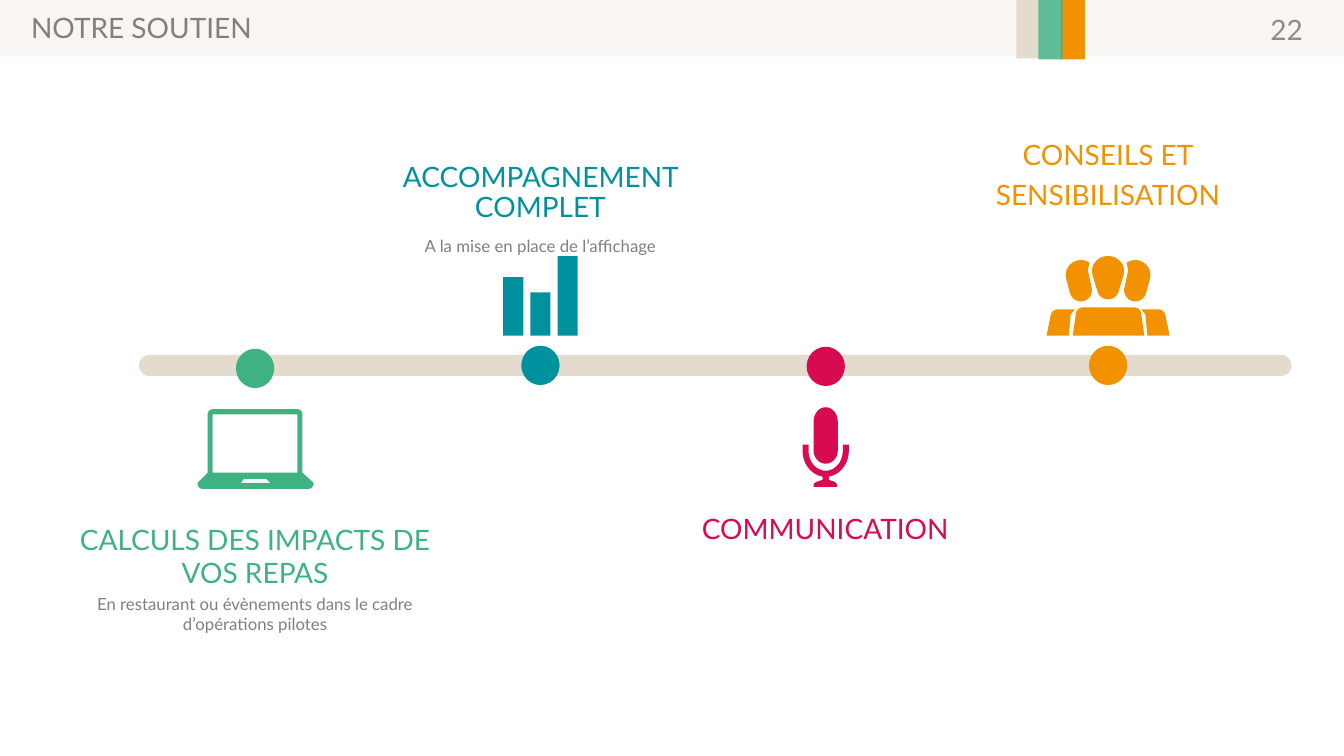
"""Build the « Notre soutien » timeline slide."""
import math

from lxml import etree
from pptx import Presentation
from pptx.dml.color import RGBColor
from pptx.enum.shapes import MSO_SHAPE
from pptx.enum.text import MSO_ANCHOR, PP_ALIGN
from pptx.oxml.ns import qn
from pptx.util import Inches, Pt

RECTANGLE, OVAL, ROUNDED = MSO_SHAPE.RECTANGLE, MSO_SHAPE.OVAL, MSO_SHAPE.ROUNDED_RECTANGLE
LEFT, CENTER, RIGHT = PP_ALIGN.LEFT, PP_ALIGN.CENTER, PP_ALIGN.RIGHT
TOP, MIDDLE = MSO_ANCHOR.TOP, MSO_ANCHOR.MIDDLE
FONT = "Lato"
COLORS = {
    "sand": "E4DBCF", "green": "3FB284", "teal": "00919F", "pink": "D60B52",
    "orange": "F39200", "grey": "808080", "number": "8C8C8C",
}

BANDS = [
    ((0, -0.02, 13.33, 0.58), "sand", 26),
    ((10.08, 0, 0.23, 0.58), "sand", 100),
    ((10.52, -0.01, 0.24, 0.6), "orange", 100),
    ((10.3, -0.01, 0.24, 0.6), "green", 83),
]
TRACK = (1.38, 3.52, 11.43, 0.21)
DOT_SIZE = (0.38, 0.39)
DOTS = [(2.34, 3.46, "green"), (5.17, 3.43, "teal"), (8, 3.44, "pink"), (10.8, 3.43, "orange")]

# Each paragraph is (text, size, colour, space before).
TEXTS = [
    ((0.21, 0.09, 4.94, 0.4), LEFT, TOP, 0.9, [("NOTRE SOUTIEN", 20, "grey", 0)]),
    ((12.2, 0.09, 0.82, 0.4), RIGHT, MIDDLE, 1.0, [("22", 20, "number", 0)]),
    ((0.62, 5.13, 3.82, 1.6), CENTER, TOP, 1.0, [
        ("CALCULS DES IMPACTS DE VOS REPAS", 20, "green", 0),
        ("En restaurant ou évènements dans le cadre d’opérations pilotes", 12, "grey", 3)]),
    ((3.45, 1.57, 3.82, 0.8), CENTER, TOP, 0.9, [
        ("ACCOMPAGNEMENT COMPLET", 20, "teal", 0),
        ("A la mise en place de l’affichage", 12, "grey", 10)]),
    ((6.29, 5.02, 3.79, 0.72), CENTER, TOP, 1.0, [("COMMUNICATION", 20, "pink", 0)]),
    ((9.57, 1.31, 2.84, 0.95), CENTER, TOP, 1.0, [
        ("CONSEILS ET", 20, "orange", 0), ("SENSIBILISATION", 20, "orange", 4.8)]),
]


def arc(center_x, center_y, radius_x, radius_y, start, end):
    steps = max(4, round(abs(end - start) / 9))
    angles = [math.radians(start + (end - start) * i / steps) for i in range(steps + 1)]
    return [(center_x + radius_x * math.cos(a), center_y + radius_y * math.sin(a)) for a in angles]


def rectangle(left, top, right, bottom):
    return [(left, top), (right, top), (right, bottom), (left, bottom)]


def mirror(outline, axis):
    return [(2 * axis - x, y) for x, y in outline]


LAPTOP = [
    arc(2.11, 4.11, 0.05, 0.05, 180, 270) + arc(2.95, 4.11, 0.05, 0.05, 270, 360)
    + [(3, 4.69), (3.11, 4.79)] + arc(3.06, 4.8, 0.05, 0.05, 0, 90)
    + arc(2.01, 4.8, 0.05, 0.05, 90, 180) + [(1.96, 4.79), (2.06, 4.69)],
    rectangle(2.11, 4.11, 2.95, 4.69)[::-1],
    [(2.39, 4.79), (2.68, 4.79), (2.64, 4.75), (2.42, 4.75)],
]
BARS = [rectangle(4.99 + 0.27 * i, top, 5.19 + 0.27 * i, 3.33)
        for i, top in enumerate([2.75, 2.9, 2.54])]
MICROPHONE = [
    [(7.96, 4.41), (8.02, 4.41)] + arc(8.19, 4.47, 0.17, 0.2, 180, 0)
    + [(8.36, 4.41), (8.42, 4.41)] + arc(8.19, 4.47, 0.23, 0.26, 0, 82)
    + [(8.22, 4.76), (8.28, 4.78), (8.3, 4.8), (8.3, 4.83),
       (8.07, 4.83), (8.07, 4.8), (8.1, 4.78), (8.16, 4.76)]
    + arc(8.19, 4.47, 0.23, 0.26, 98, 180),
    arc(8.19, 4.18, 0.12, 0.14, 180, 360) + arc(8.19, 4.47, 0.12, 0.13, 0, 180),
]
SIDE_PERSON = [
    arc(10.72, 2.73, 0.15, 0.15, 165, 305) + [(10.79, 2.68), (10.83, 2.87)]
    + arc(10.72, 2.88, 0.11, 0.11, 0, 165),
    arc(10.49, 3.14, 0.07, 0.07, 190, 270)
    + [(10.66, 3.07), (10.62, 3.12), (10.6, 3.33), (10.38, 3.33)],
]
MIDDLE_PERSON = [
    arc(10.99, 2.69, 0.16, 0.15, 165, 375) + arc(10.99, 2.86, 0.11, 0.11, 10, 170),
    arc(10.74, 3.12, 0.07, 0.07, 180, 270) + arc(11.25, 3.12, 0.07, 0.07, 270, 360)
    + [(11.35, 3.33), (10.64, 3.33)],
]
PEOPLE = SIDE_PERSON + MIDDLE_PERSON + [mirror(part, 10.99) for part in SIDE_PERSON]
ICONS = [(LAPTOP, "green"), (BARS, "teal"), (MICROPHONE, "pink"), (PEOPLE, "orange")]


def paint(shape, color, opacity=100):
    shape.shadow.inherit = False
    shape.fill.solid()
    shape.fill.fore_color.rgb = RGBColor.from_string(COLORS[color])
    shape.line.fill.background()
    if opacity < 100:
        color_node = shape.fill._xPr.find(qn("a:solidFill"))[0]
        etree.SubElement(color_node, qn("a:alpha")).set("val", str(opacity * 1000))


def add_block(slide, kind, bounds, color, opacity=100):
    shape = slide.shapes.add_shape(kind, *map(Inches, bounds))
    paint(shape, color, opacity)
    return shape


def add_icon(slide, outlines, color):
    contours = [[(Inches(x), Inches(y)) for x, y in outline] for outline in outlines]
    builder = slide.shapes.build_freeform(*contours[0][0])
    for index, contour in enumerate(contours):
        if index:
            builder.move_to(*contour[0])
        builder.add_line_segments(contour[1:], close=True)
    paint(builder.convert_to_shape(), color)


def add_text(slide, bounds, alignment, anchor, line_spacing, lines):
    frame = slide.shapes.add_textbox(*map(Inches, bounds)).text_frame
    frame.word_wrap = True
    frame.vertical_anchor = anchor
    frame.text = "\n".join(line[0] for line in lines)
    for para, (_, size, color, space_before) in zip(frame.paragraphs, lines):
        para.alignment = alignment
        para.line_spacing = line_spacing
        para.space_before = Pt(space_before)
        font = para.runs[0].font
        font.name, font.size = FONT, Pt(size)
        font.color.rgb = RGBColor.from_string(COLORS[color])


def main():
    deck = Presentation()
    deck.slide_width, deck.slide_height = Inches(13.33), Inches(7.5)
    slide = deck.slides.add_slide(deck.slide_layouts[6])
    for bounds, color, opacity in BANDS:
        add_block(slide, RECTANGLE, bounds, color, opacity)
    add_block(slide, ROUNDED, TRACK, "sand").adjustments[0] = 0.5
    for left, top, color in DOTS:
        add_block(slide, OVAL, (left, top, *DOT_SIZE), color)
    for outlines, color in ICONS:
        add_icon(slide, outlines, color)
    for text in TEXTS:
        add_text(slide, *text)
    deck.save("out.pptx")


if __name__ == "__main__":
    main()
